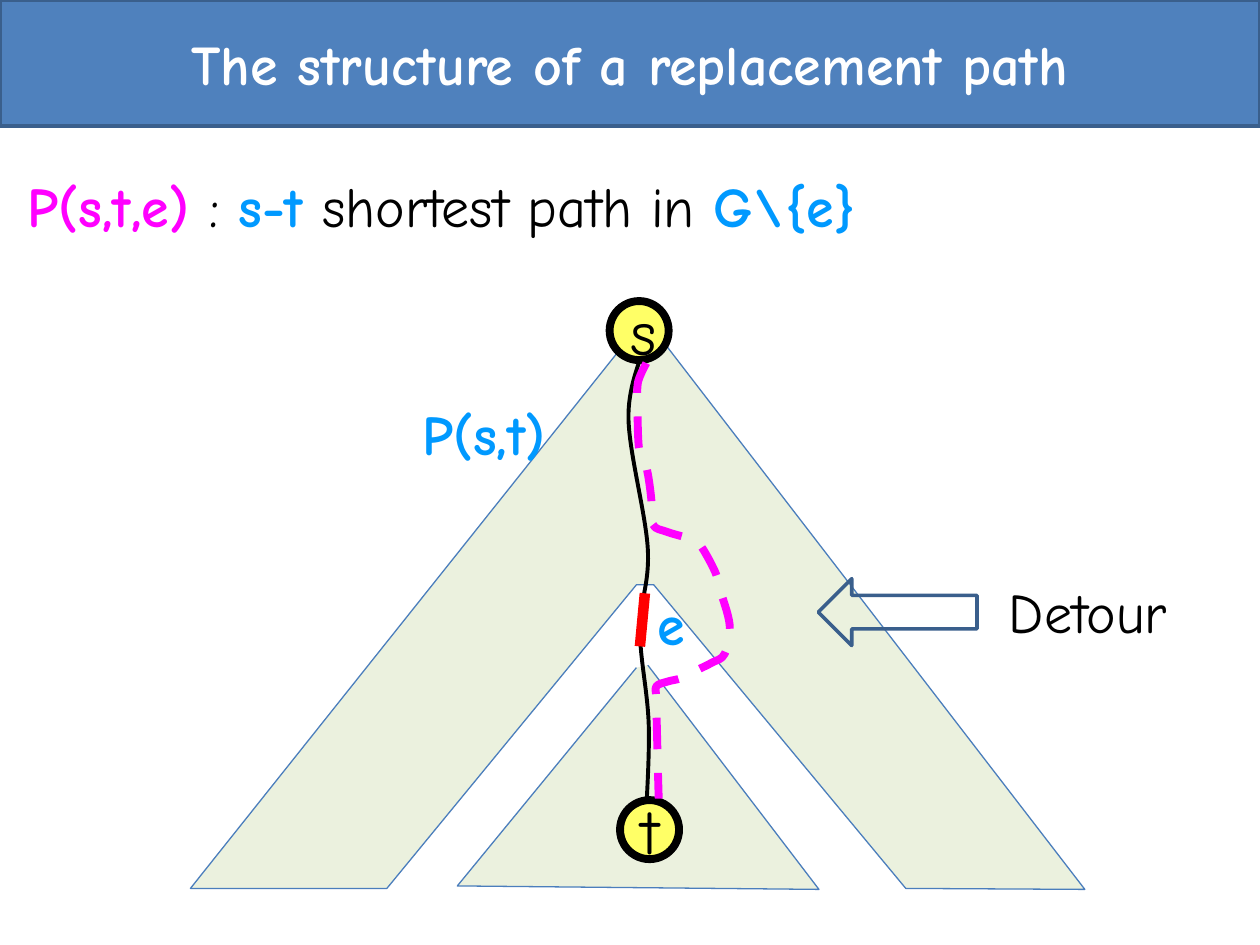
from lxml import etree
from pptx import Presentation
from pptx.dml.color import RGBColor
from pptx.enum.dml import MSO_LINE
from pptx.enum.shapes import MSO_CONNECTOR, MSO_SHAPE
from pptx.enum.text import MSO_ANCHOR, MSO_AUTO_SIZE as AutoSize, PP_ALIGN
from pptx.oxml.ns import qn
from pptx.util import Cm, Pt

BLACK, WHITE, RED, YELLOW = "000000", "FFFFFF", "FF0000", "FFFF66"
BLUE, MAGENTA = "0099FF", "FF00FF"
BANNER, BORDER = "4F81BD", "3A5F8C"
TREE, TREE_EDGE = "EBF1DE", "4B7EBC"


def color(value):
    return RGBColor.from_string(value)


class TreeSlide:
    """Draws a shortest-path tree and its labels on one slide in one style."""

    font = "Comic Neue"
    size = 32

    def __init__(self, presentation):
        self.slide = presentation.slides.add_slide(presentation.slide_layouts[5])
        self.shapes = self.slide.shapes

    def paint(self, shape, fill, line, width):
        if fill:
            shape.fill.solid()
            shape.fill.fore_color.rgb = color(fill)
        else:
            shape.fill.background()
        shape.line.color.rgb = color(line)
        shape.line.width = Pt(width)

    def add_runs(self, paragraph, runs, size=size):
        for text, text_color, bold in runs:
            run = paragraph.add_run()
            run.text = text
            run.font.name = self.font
            run.font.size = Pt(size)
            run.font.bold = bold
            run.font.color.rgb = color(text_color)

    def title(self, text, width, height):
        shape = self.shapes.title
        shape.left, shape.top = Cm(0), Cm(0)
        shape.width, shape.height = Cm(width), Cm(height)
        self.paint(shape, BANNER, BORDER, 2)
        frame = shape.text_frame
        frame.auto_size = AutoSize.NONE
        frame.vertical_anchor = MSO_ANCHOR.MIDDLE
        frame.paragraphs[0].alignment = PP_ALIGN.CENTER
        self.add_runs(frame.paragraphs[0], [(text, WHITE, True)])

    def label(self, left, top, width, *runs):
        box = self.shapes.add_textbox(Cm(left), Cm(top), Cm(width), Cm(1.63))
        box.text_frame.word_wrap = False
        box.text_frame.auto_size = AutoSize.SHAPE_TO_FIT_TEXT
        self.add_runs(box.text_frame.paragraphs[0], runs)

    def shape(self, kind, left, top, width, height, fill, line, line_width):
        shape = self.shapes.add_shape(kind, Cm(left), Cm(top), Cm(width), Cm(height))
        shape.shadow.inherit = False
        self.paint(shape, fill, line, line_width)
        return shape

    def vertex(self, left, top, name):
        circle = self.shape(MSO_SHAPE.OVAL, left, top, 1.19, 1.19, YELLOW, BLACK, 4.5)
        circle.text_frame.vertical_anchor = MSO_ANCHOR.MIDDLE
        paragraph = circle.text_frame.paragraphs[0]
        paragraph.alignment = PP_ALIGN.CENTER
        self.add_runs(paragraph, [(name, BLACK, False)], size=36)

    def outline(self, points, fill=None, line=TREE_EDGE, width=0.75):
        start, *rest = [(Cm(x), Cm(y)) for x, y in points]
        builder = self.shapes.build_freeform(*start)
        builder.add_line_segments(rest, close=False)
        shape = builder.convert_to_shape()
        shape.shadow.inherit = False
        self.paint(shape, fill, line, width)
        return shape

    def curve(self, points, line, width):
        shape = self.outline(points, None, line, width)
        element = shape.element
        nodes = [(int(pt.get("x")), int(pt.get("y"))) for pt in element.iter(qn("a:pt"))]
        nodes = [nodes[0], *nodes, nodes[-1]]
        for index, segment in enumerate(list(element.iter(qn("a:lnTo")))):
            before, start, end, after = nodes[index:index + 4]
            leave = [s + (e - b) // 6 for b, s, e in zip(before, start, end)]
            arrive = [e - (a - s) // 6 for s, e, a in zip(start, end, after)]
            segment.tag = qn("a:cubicBezTo")
            for position, (x, y) in enumerate((leave, arrive)):
                control = etree.Element(qn("a:pt"), x=str(x), y=str(y))
                segment.insert(position, control)
        return shape

    def edge(self, start, end, line, width):
        connector = self.shapes.add_connector(
            MSO_CONNECTOR.STRAIGHT, *map(Cm, start), *map(Cm, end))
        connector.line.color.rgb = color(line)
        connector.line.width = Pt(width)
        etree.SubElement(connector.element.spPr, qn("a:effectLst"))


def main():
    presentation = Presentation()
    presentation.slide_width, presentation.slide_height = Cm(25.4), Cm(19.05)
    tree = TreeSlide(presentation)
    tree.title("The structure of a replacement path", 25.4, 2.54)

    tree.outline([(12.83, 13.46), (9.22, 17.86), (16.51, 17.93), (13.06, 13.41)], TREE)
    tree.outline([(12.75, 6.73), (3.84, 17.91), (7.8, 17.91), (12.83, 11.79),
                  (13.18, 11.79), (18.26, 17.91), (21.87, 17.93), (13.21, 6.68)], TREE)
    tree.curve([(13.03, 6.88), (12.67, 8.41), (13.06, 11.07), (12.9, 12.7),
                (13.08, 14.66), (13, 16.87)], BLACK, 2.25)
    tree.edge((13, 11.96), (12.9, 13.03), RED, 6)

    tree.label(0.3, 3.33, 20.8, ("P(s,t,e) ", MAGENTA, True), (": ", BLACK, False),
               ("s-t", BLUE, True), (" shortest path in ", BLACK, False),
               ("G\\{e}", BLUE, True))
    tree.label(13, 11.76, 1.14, ("e", BLUE, True))
    tree.vertex(12.29, 6.07, "s")
    tree.vertex(12.5, 16.13, "t")
    tree.label(8.26, 7.92, 4.04, ("P(s,t)", BLUE, True))
    arrow = tree.shape(MSO_SHAPE.DOWN_ARROW, 17.42, 10.74, 1.35, 3.2, None, BORDER, 2)
    arrow.rotation = 90
    tree.label(20.09, 11.51, 4.24, ("Detour", BLACK, False))

    detour = tree.curve([
        (13.03, 7.32), (12.9, 7.59), (12.85, 7.8), (12.85, 8.2), (12.88, 9.02),
        (12.98, 9.25), (13.06, 9.55), (13.13, 10.06), (13.16, 10.57), (13.44, 10.72),
        (13.87, 10.85), (14.07, 10.95), (14.22, 11.15), (14.43, 11.56), (14.5, 11.84),
        (14.71, 12.6), (14.61, 13.18), (14.35, 13.36), (14.05, 13.51), (13.74, 13.67),
        (13.46, 13.74), (13.23, 13.84), (13.23, 14.1), (13.26, 15.37), (13.28, 16.1),
    ], MAGENTA, 4.5)
    detour.line.dash_style = MSO_LINE.DASH
    presentation.save("out.pptx")


if __name__ == "__main__":
    main()
